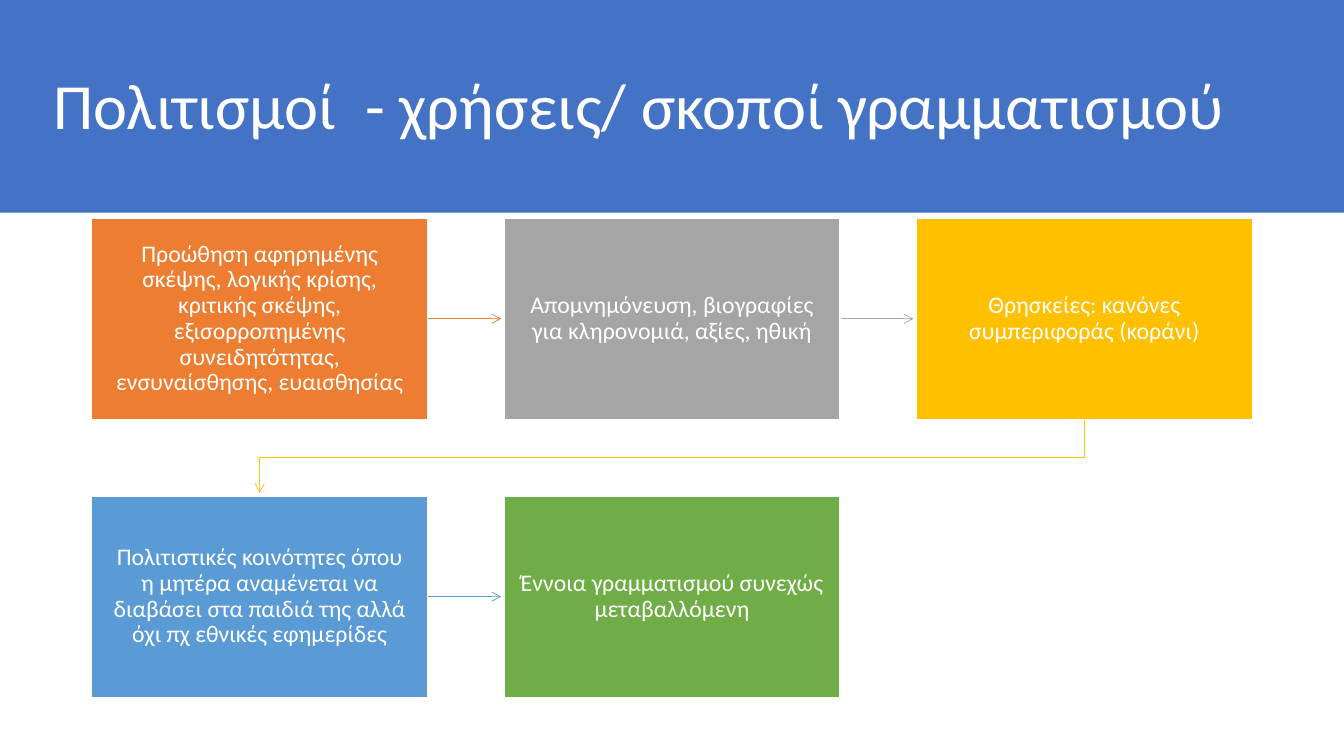
from lxml.etree import SubElement
from pptx import Presentation
from pptx.dml.color import RGBColor
from pptx.enum.shapes import MSO_CONNECTOR, MSO_SHAPE
from pptx.enum.text import MSO_ANCHOR, MSO_AUTO_SIZE, PP_ALIGN
from pptx.oxml.ns import qn
from pptx.util import Pt

SLIDE_WIDTH, SLIDE_HEIGHT = 960, 540
COLUMNS = 3
STEP_WIDTH, STEP_HEIGHT = 240, 144
GAP = 54.5
ARROW_LENGTH = 52.5
WHITE = "FFFFFF"
STEPS = [
    ("Προώθηση αφηρημένης σκέψης, λογικής κρίσης, κριτικής σκέψης, "
     "εξισορροπημένης συνειδητότητας, ενσυναίσθησης, ευαισθησίας", "ED7D31"),
    ("Απομνημόνευση, βιογραφίες για κληρονομιά, αξίες, ηθική", "A5A5A5"),
    ("Θρησκείες: κανόνες συμπεριφοράς (κοράνι)", "FFC000"),
    ("Πολιτιστικές κοινότητες όπου η μητέρα αναμένεται να διαβάσει "
     "στα παιδιά της αλλά όχι πχ εθνικές εφημερίδες", "5B9BD5"),
    ("Έννοια γραμματισμού συνεχώς μεταβαλλόμενη", "70AD47"),
]


def color(value):
    return RGBColor.from_string(value)


def write(shape, text, size, align=PP_ALIGN.LEFT, inset=(7.2, 3.6)):
    frame = shape.text_frame
    frame.word_wrap = True
    frame.auto_size = MSO_AUTO_SIZE.NONE
    frame.vertical_anchor = MSO_ANCHOR.MIDDLE
    frame.margin_left = frame.margin_right = Pt(inset[0])
    frame.margin_top = frame.margin_bottom = Pt(inset[1])
    paragraph = frame.paragraphs[0]
    paragraph.alignment = align
    paragraph.line_spacing = 0.9
    run = paragraph.add_run()
    run.text = text
    run.font.name = "Calibri"
    run.font.size = Pt(size)
    run.font.color.rgb = color(WHITE)


def add_rectangle(slide, left, top, width, height, fill, outline=None):
    rectangle = slide.shapes.add_shape(
        MSO_SHAPE.RECTANGLE, Pt(left), Pt(top), Pt(width), Pt(height))
    rectangle.shadow.inherit = False
    rectangle.fill.solid()
    rectangle.fill.fore_color.rgb = color(fill)
    if outline:
        rectangle.line.color.rgb = color(outline)
        rectangle.line.width = Pt(1)
    else:
        rectangle.line.fill.background()
    return rectangle


def style_arrow(arrow, stroke):
    arrow.line.color.rgb = color(stroke)
    arrow.line.width = Pt(0.5)
    properties = arrow.element.spPr
    SubElement(properties.find(qn("a:ln")), qn("a:tailEnd"), type="arrow")
    if properties.find(qn("a:effectLst")) is None:
        SubElement(properties, qn("a:effectLst"))


def add_next_arrow(slide, left, middle, stroke):
    arrow = slide.shapes.add_connector(
        MSO_CONNECTOR.STRAIGHT,
        Pt(left), Pt(middle), Pt(left + ARROW_LENGTH), Pt(middle))
    style_arrow(arrow, stroke)


def add_wrap_arrow(slide, start_x, end_x, top, stroke):
    """Lead from the last step of a row down to the first of the next."""
    turn = top + GAP / 2
    builder = slide.shapes.build_freeform(Pt(start_x), Pt(top))
    builder.add_line_segments(
        [(Pt(start_x), Pt(turn)), (Pt(end_x), Pt(turn)),
         (Pt(end_x), Pt(top + ARROW_LENGTH))], close=False)
    arrow = builder.convert_to_shape()
    arrow.fill.background()
    arrow.shadow.inherit = False
    style_arrow(arrow, stroke)


def add_header(slide, left, top, width, height):
    band = add_rectangle(slide, left, top, width, height, "4472C4")
    title = slide.shapes.title
    title.element.addprevious(band.element)
    title.left, title.top = Pt(left + 31), Pt(top + 25.5)
    title.width, title.height = Pt(width - 61), Pt(104.5)
    write(title, "Πολιτισμοί  - χρήσεις/ σκοποί γραμματισμού", 46)


def add_process(slide, left, top):
    for index, (text, fill) in enumerate(STEPS):
        row, column = divmod(index, COLUMNS)
        x = left + column * (STEP_WIDTH + GAP)
        y = top + row * (STEP_HEIGHT + GAP)
        if index < len(STEPS) - 1:
            if column < COLUMNS - 1:
                add_next_arrow(slide, x + STEP_WIDTH, y + STEP_HEIGHT / 2, fill)
            else:
                add_wrap_arrow(slide, x + STEP_WIDTH / 2, left + STEP_WIDTH / 2,
                               y + STEP_HEIGHT, fill)
        step = add_rectangle(slide, x, y, STEP_WIDTH, STEP_HEIGHT, fill, WHITE)
        write(step, text, 17, align=PP_ALIGN.CENTER, inset=(11.6, 12.3))


def main():
    presentation = Presentation()
    presentation.slide_width = Pt(SLIDE_WIDTH)
    presentation.slide_height = Pt(SLIDE_HEIGHT)
    slide = presentation.slides.add_slide(presentation.slide_layouts[5])
    add_header(slide, 0, -0.5, SLIDE_WIDTH, 152.5)
    add_process(slide, 65.5, 155.7)
    presentation.save("out.pptx")


if __name__ == "__main__":
    main()
